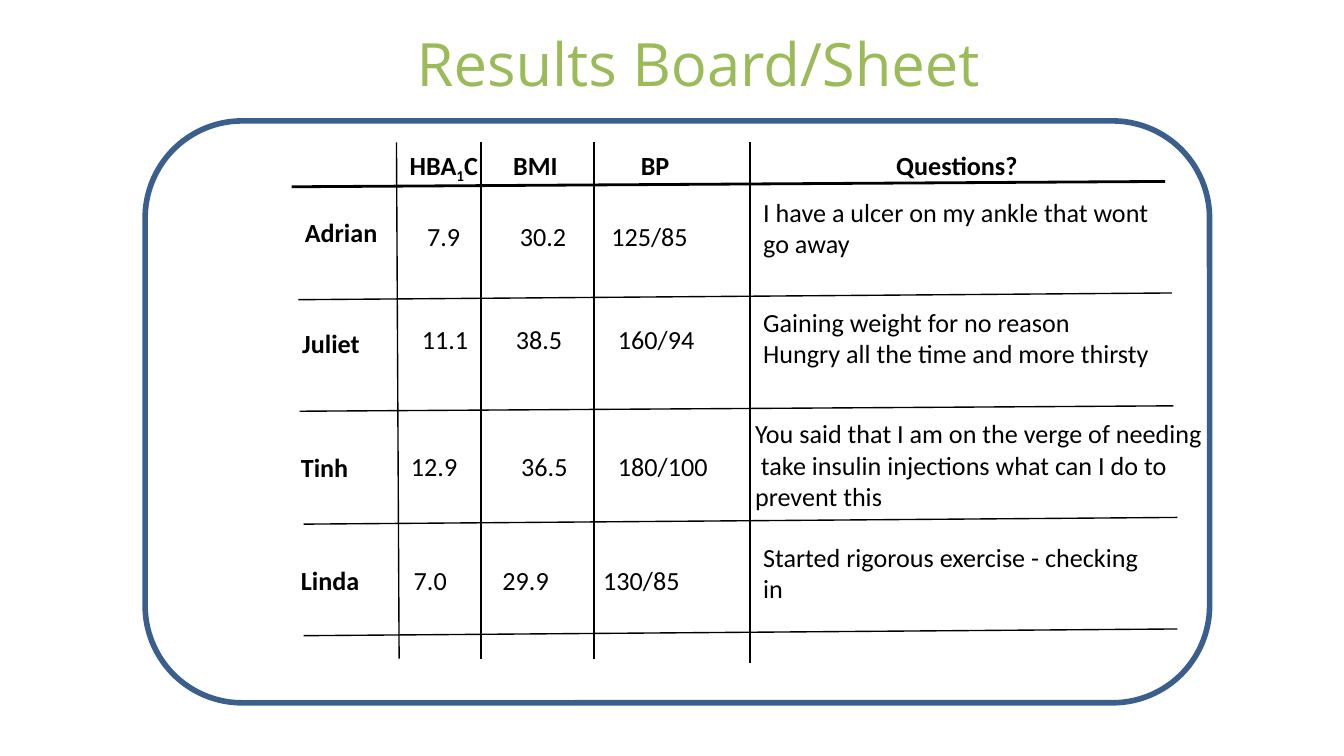
from lxml import etree
from pptx import Presentation
from pptx.dml.color import RGBColor
from pptx.enum.shapes import MSO_CONNECTOR, MSO_SHAPE
from pptx.enum.text import MSO_ANCHOR, PP_ALIGN
from pptx.oxml.ns import qn
from pptx.util import Pt

PX = 9144  # 100 px to the inch
LINE = MSO_CONNECTOR.STRAIGHT
ROUND = MSO_SHAPE.ROUNDED_RECTANGLE
TOP = MSO_ANCHOR.TOP
LEFT = PP_ALIGN.LEFT
COLORS = {"ink": "000000", "title": "9BBB59", "frame": "3A5F8C"}

# Text, left
HEADS = [("BMI", 372), ("BP", 467), ("Questions?", 657)]
# Name, left, top, top of values, (value, left)...
ROWS = [
    ("Adrian", 217, 156, 159, [("7.9", 308), ("30.2", 377), ("125/85", 445)]),
    ("Juliet", 215, 239, 236, [("11.1", 304), ("38.5", 374), ("160/94", 450)]),
    ("Tinh", 214, 331, 330, [("12.9", 296), ("36.5", 378), ("180/100", 450)]),
    ("Linda", 214, 415, 415, [("7.0", 298), ("29.9", 364), ("130/85", 439)]),
]
# Box, wrap, lines
ASKS = [
    ((558, 141, 392, 57), True,
     ["I have a ulcer on my ankle that wont", "go away"]),
    ((558, 223, 310, 57), False,
     ["Gaining weight for no reason", "Hungry all the time and more thirsty"]),
    ((552, 306, 356, 81), False,
     ["You said that I am on the verge of needing",
      " take insulin injections what can I do to", "prevent this"]),
    ((558, 398, 316, 57), True, ["Started rigorous exercise - checking in"]),
]
# Left, top, right, bottom, weight
RULES = [
    (217, 139, 867, 135, 1.5),
    (222, 223, 872, 218, 0.75),
    (223, 306, 873, 302, 0.75),
    (226, 390, 876, 385, 0.75),
    (226, 473, 876, 468, 0.75),
    (295, 106, 297, 490, 0.75),
    (358, 106, 358, 490, 0.75),
    (442, 106, 442, 490, 0.75),
    (558, 106, 558, 490, 0.75),
    (558, 110, 558, 493, 0.75),
]


def px(*nums):
    return [n * PX for n in nums]


def rgb(name):
    return RGBColor.from_string(COLORS[name])


def add_run(para, text, size=14, face="Calibri", color="ink", bold=False):
    run = para.add_run()
    run.text = text
    font = run.font
    font.size, font.name, font.bold = Pt(size), face, bold
    font.color.rgb = rgb(color)
    return run


def add_text(slide, box, lines, bold=False, wrap=True):
    frame = slide.shapes.add_textbox(*px(*box)).text_frame
    frame.word_wrap = wrap
    for i, line in enumerate(lines):
        para = frame.add_paragraph() if i else frame.paragraphs[0]
        add_run(para, line, bold=bold)
    return frame


def add_rule(slide, x1, y1, x2, y2, weight):
    rule = slide.shapes.add_connector(LINE, *px(x1, y1, x2, y2))
    rule.line.color.rgb = rgb("ink")
    rule.line.width = Pt(weight)
    etree.SubElement(rule._element.spPr, qn("a:effectLst"))


def add_title(slide, text):
    title = slide.shapes.title
    title.left, title.top, title.width, title.height = px(300, 15, 444, 64)
    frame = title.text_frame
    frame.word_wrap = False
    frame.vertical_anchor = TOP
    para = frame.paragraphs[0]
    para.alignment = LEFT
    add_run(para, text, 32, "Open Sans", "title")


def add_frame(slide):
    board = slide.shapes.add_shape(ROUND, *px(108, 90, 792, 433))
    board.shadow.inherit = False
    board.fill.background()
    board.line.color.rgb = rgb("frame")
    board.line.width = Pt(3)


def add_heads(slide):
    para = add_text(slide, (295, 106, 80, 34), ["HBA"], True).paragraphs[0]
    sub = add_run(para, "1", bold=True)
    sub._r.get_or_add_rPr().set("baseline", "-25000")
    add_run(para, "C", bold=True)
    for text, left in HEADS:
        add_text(slide, (left, 106, 114, 34), [text], True)


def main():
    prs = Presentation()
    prs.slide_width = 1000 * PX
    prs.slide_height = prs.slide_width * 9 // 16
    slide = prs.slides.add_slide(prs.slide_layouts[5])

    # Title and board
    add_title(slide, "Results Board/Sheet")
    add_frame(slide)

    # Names, results and questions
    add_heads(slide)
    for name, left, top, mid, values in ROWS:
        add_text(slide, (left, top, 80, 34), [name], True)
        for value, x in values:
            add_text(slide, (x, mid, 90, 34), [value])
    for box, wrap, lines in ASKS:
        add_text(slide, box, lines, wrap=wrap)

    # Hand-ruled grid
    for rule in RULES:
        add_rule(slide, *rule)

    prs.save("out.pptx")


if __name__ == "__main__":
    main()
